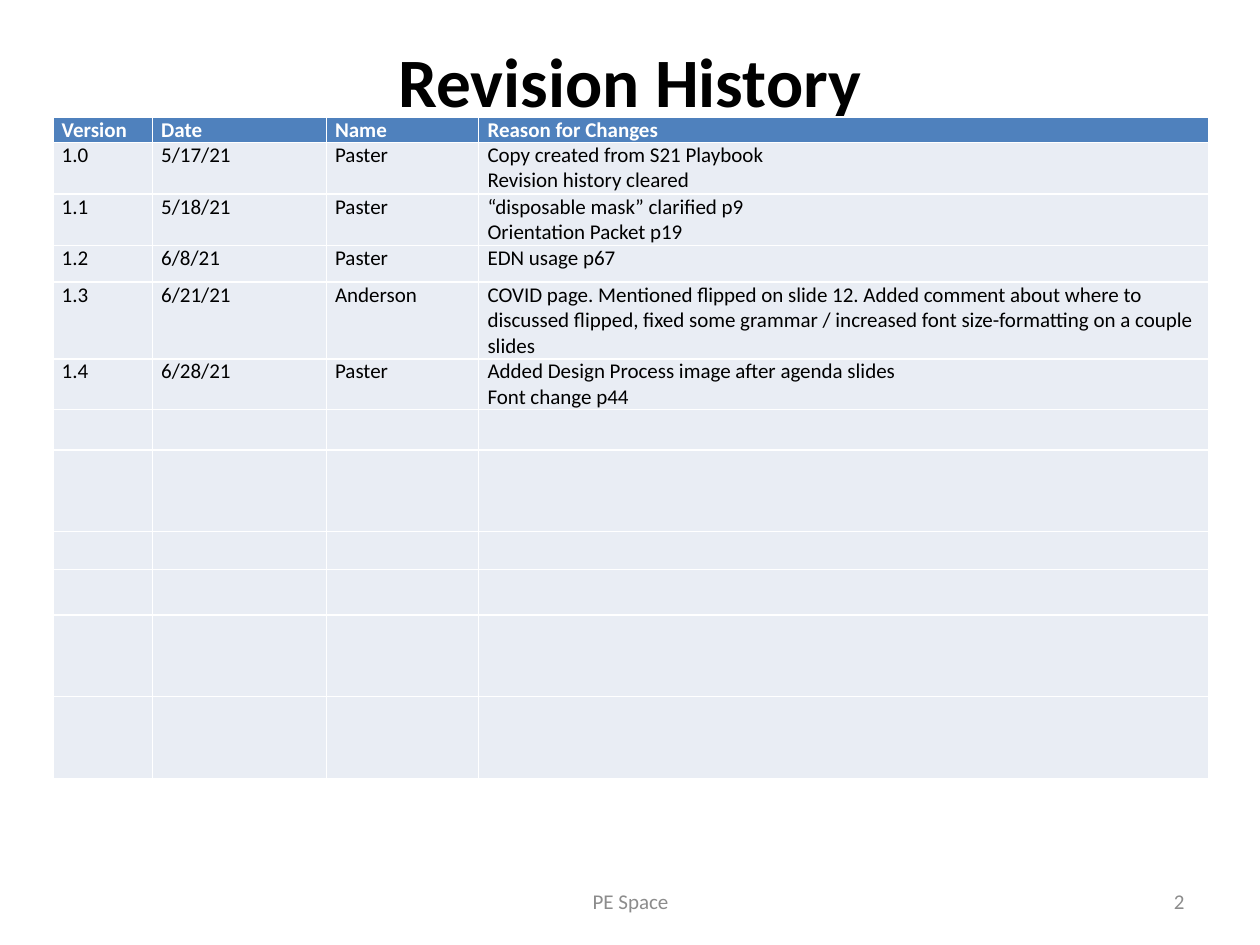
"""Build a revision history slide with a version table and a footer."""
from pptx import Presentation, util as u
from pptx.dml.color import RGBColor
from pptx.enum import text

WIDE, HIGH = 10, 7.5
COLS = [0.79, 1.38, 1.21, 5.79]
ROWS = [0.2, 0.41, 0.41, 0.29, 0.61, 0.4, 0.32, 0.65, 0.3, 0.36, 0.65, 0.65]
LOG = [
    ("Version", "Date", "Name", "Reason for Changes"),
    ("1.0", "5/17/21", "Paster", "Copy created from S21 Playbook\nRevision history cleared"),
    ("1.1", "5/18/21", "Paster", "“disposable mask” clarified p9\nOrientation Packet p19"),
    ("1.2", "6/8/21", "Paster", "EDN usage p67"),
    ("1.3", "6/21/21", "Anderson",
     "COVID page. Mentioned flipped on slide 12. Added comment about where to discussed "
     "flipped, fixed some grammar / increased font size-formatting on a couple slides"),
    ("1.4", "6/28/21", "Paster",
     "Added Design Process image after agenda slides\nFont change p44"),
]
LOG += [("",) * len(COLS)] * (len(ROWS) - len(LOG))


def style(frame, words, size, color, bold=False, align=text.PP_ALIGN.LEFT):
    frame.text = words
    frame.word_wrap = True
    for para in frame.paragraphs:
        para.alignment = align
        font = para.font
        font.name, font.size, font.bold = "Calibri", u.Pt(size), bold
        font.color.rgb = RGBColor.from_string(color)


deck = Presentation()
deck.slide_width, deck.slide_height = u.Inches(WIDE), u.Inches(HIGH)
slide = deck.slides.add_slide(deck.slide_layouts[6])

MID, TOP = text.MSO_ANCHOR.MIDDLE, text.MSO_ANCHOR.TOP
CENTER, RIGHT = text.PP_ALIGN.CENTER, text.PP_ALIGN.RIGHT
for words, box, size, color, bold, align, anchor in [
    ("Revision History", (0.5, 0.3, 9, 1.25), 39.6, "000000", True, CENTER, TOP),
    ("PE Space", (3.42, 6.95, 3.17, 0.4), 12, "8C8C8C", False, CENTER, MID),
    ("2", (7.17, 6.95, 2.33, 0.4), 12, "8C8C8C", False, RIGHT, MID),
]:
    frame = slide.shapes.add_textbox(*map(u.Inches, box)).text_frame
    style(frame, words, size, color, bold, align)
    frame.vertical_anchor = anchor
    frame.margin_top = frame.margin_bottom = 0

area = map(u.Inches, (0.42, 0.93, sum(COLS), sum(ROWS)))
table = slide.shapes.add_table(len(ROWS), len(COLS), *area).table
table.horz_banding = False
for col, width in zip(table.columns, COLS):
    col.width = u.Inches(width)

for r, (row, height, entry) in enumerate(zip(table.rows, ROWS, LOG)):
    row.height = u.Inches(height)
    head = r == 0
    for cell, words in zip(row.cells, entry):
        cell.margin_left = cell.margin_right = u.Inches(0.07)
        cell.margin_top = cell.margin_bottom = 0
        cell.fill.solid()
        cell.fill.fore_color.rgb = RGBColor.from_string("4F81BD" if head else "E9EDF4")
        style(cell.text_frame, words, 12, "FFFFFF" if head else "000000", head)

deck.save("out.pptx")
